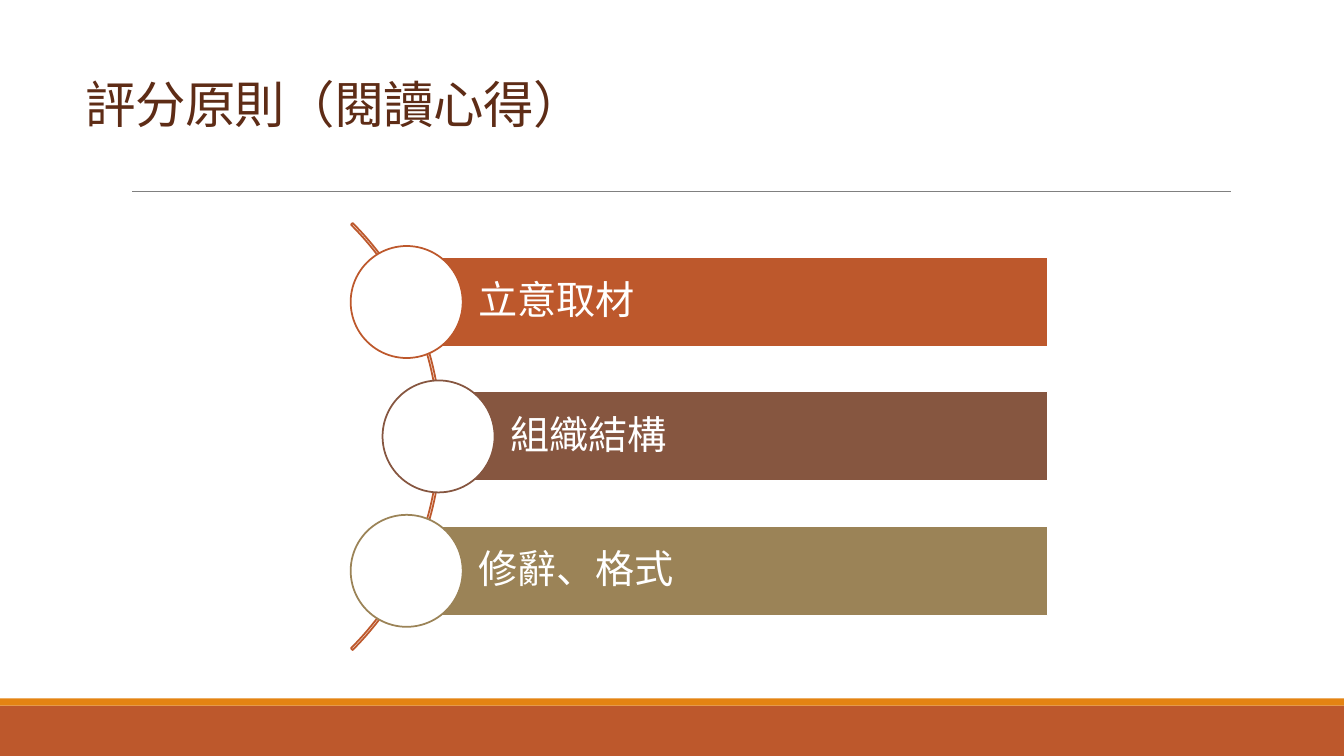
import math

from lxml import etree
from pptx import Presentation
from pptx.dml.color import RGBColor
from pptx.enum.shapes import MSO_CONNECTOR, MSO_SHAPE
from pptx.enum.text import MSO_ANCHOR, MSO_AUTO_SIZE, PP_ALIGN
from pptx.oxml.ns import qn
from pptx.util import Inches, Pt

RECT, OVAL, ARC = MSO_SHAPE.RECTANGLE, MSO_SHAPE.OVAL, MSO_SHAPE.BLOCK_ARC
STRAIGHT = MSO_CONNECTOR.STRAIGHT
MIDDLE, BOTTOM = MSO_ANCHOR.MIDDLE, MSO_ANCHOR.BOTTOM
LEFT = PP_ALIGN.LEFT
NO_FIT = MSO_AUTO_SIZE.NONE

WIDTH, HEIGHT = 13.33, 7.5
COLORS = {
    "rust": "BD582C", "orange": "E48312", "brown": "865640", "olive": "9B8357",
    "title": "5E2C16", "rule": "808080", "white": "FFFFFF",
}
HEAD_FONT, BODY_FONT = "Calibri", "Noto Sans CJK SC"
CRITERIA = [("立意取材", "rust"), ("組織結構", "brown"), ("修辭、格式", "olive")]


def rgb(name):
    return RGBColor.from_string(COLORS[name])


def add_shape(s, kind, box, fill=None, line=None):
    sp = s.shapes.add_shape(kind, *map(Inches, box))
    sp.shadow.inherit = False
    if fill:
        sp.fill.solid()
        sp.fill.fore_color.rgb = rgb(fill)
    else:
        sp.fill.background()
    if line:
        sp.line.color.rgb = rgb(line)
        sp.line.width = Pt(1.25)
    else:
        sp.line.fill.background()
    return sp


def write_line(tf, text, font, size, color, spacing, anchor):
    tf.word_wrap = True
    tf.auto_size = NO_FIT
    tf.vertical_anchor = anchor
    p = tf.paragraphs[0]
    p.alignment = LEFT
    p.line_spacing = spacing
    r = p.add_run()
    r.text = text
    r.font.name = font
    r.font.size = Pt(size)
    r.font.color.rgb = rgb(color)
    etree.SubElement(r.font._element, qn("a:ea")).set("typeface", font)
    return r


def add_footer_bands(s, box):
    left, top, width, height = box
    stripe = 0.07
    add_shape(s, RECT, (left, top + stripe, width, height - stripe), "rust")
    add_shape(s, RECT, (left, top, width, stripe), "orange")


def add_heading(s, box, text):
    left, top, width, height = box
    title = s.shapes.title
    title.left, title.top, title.width, title.height = map(Inches, box)
    r = write_line(title.text_frame, text, HEAD_FONT, 36, "title", 0.85, BOTTOM)
    r.font._element.set("spc", "-50")

    rule_y = Inches(top + height + 0.52)
    rule = s.shapes.add_connector(STRAIGHT, Inches(left + 0.56), rule_y,
                                  Inches(left + width + 0.46), rule_y)
    rule.line.color.rgb = rgb("rule")
    rule.line.width = Pt(0.5)
    etree.SubElement(rule._element.spPr, qn("a:effectLst"))


def add_criteria(s, box):
    """Bars whose round heads are centred on one arc at the left of the box."""
    left, top, width, height = box
    pitch = height / len(CRITERIA)
    bar_h = pitch * 2 / 3
    disc = bar_h * 1.25
    radius = 2.97
    arc_size = 2 * radius + 0.05
    arc_x, arc_y = left - 2.1, top + height / 2

    arc = add_shape(s, ARC, (arc_x - arc_size / 2, arc_y - arc_size / 2,
                             arc_size, arc_size), line="rust")
    for i, value in enumerate((189, 27, 0.004)):
        arc.adjustments[i] = value

    for i, (text, color) in enumerate(CRITERIA):
        y = top + (i + 0.5) * pitch
        x = arc_x + math.sqrt(radius ** 2 - (y - arc_y) ** 2)
        bar = add_shape(s, RECT, (x, y - bar_h / 2, left + width - x, bar_h),
                        color, "white")
        tf = bar.text_frame
        tf.margin_left = Inches(0.71)
        tf.margin_right = tf.margin_top = tf.margin_bottom = Inches(0.08)
        write_line(tf, text, BODY_FONT, 28, "white", 0.9, MIDDLE)
        add_shape(s, OVAL, (x - disc / 2, y - disc / 2, disc, disc),
                  "white", color)


def main():
    prs = Presentation()
    prs.slide_width, prs.slide_height = Inches(WIDTH), Inches(HEIGHT)
    s = prs.slides.add_slide(prs.slide_layouts[5])
    add_footer_bands(s, (0, HEIGHT - 0.57, WIDTH, 0.57))
    add_heading(s, (0.75, 0.48, 11, 0.9), "評分原則（閱讀心得）")
    add_criteria(s, (3.48, 2.33, 6.91, 4))
    prs.save("out.pptx")


if __name__ == "__main__":
    main()
